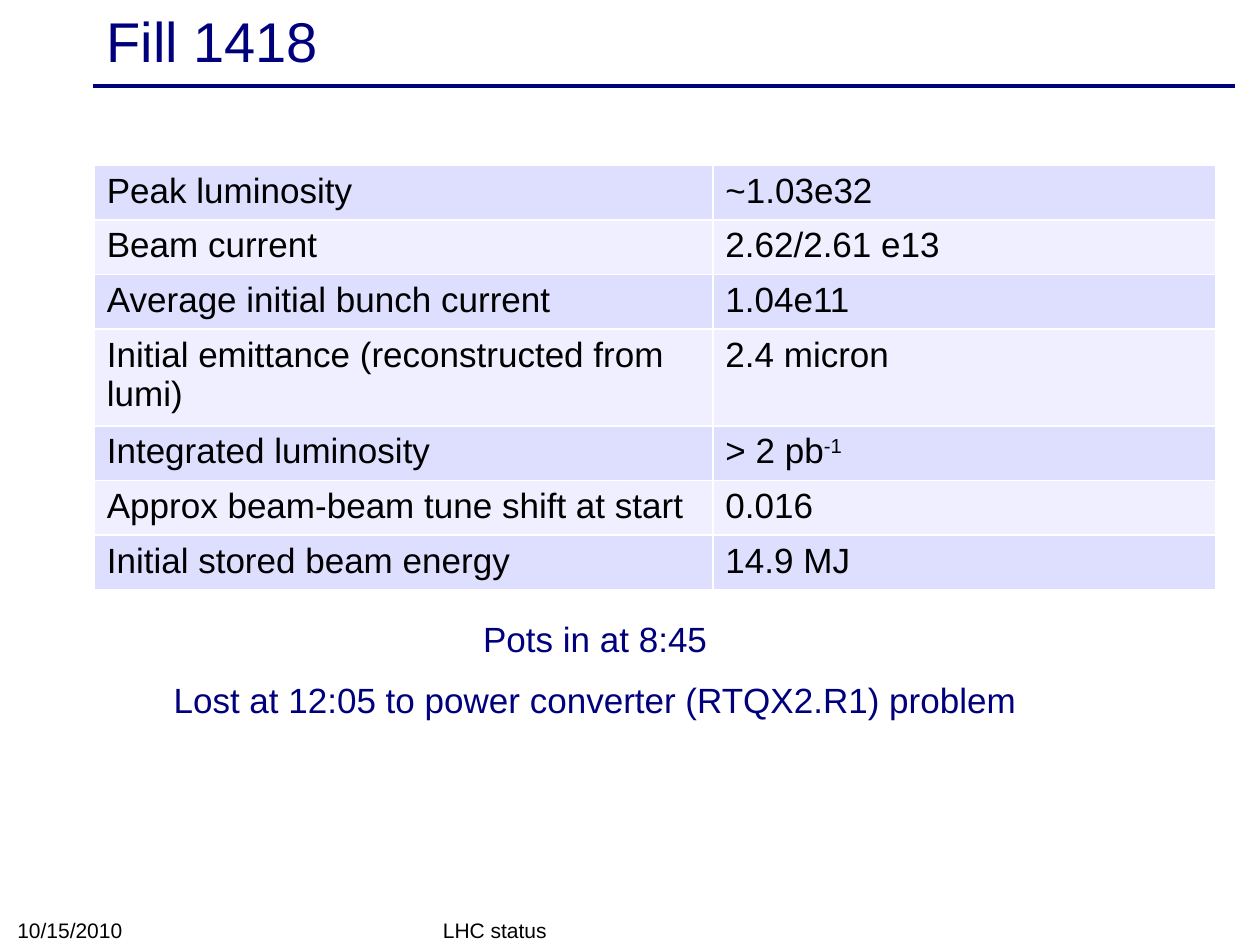
from dataclasses import dataclass

from lxml.etree import SubElement
from pptx import Presentation
from pptx.dml.color import RGBColor as Rgb
from pptx.enum.shapes import MSO_CONNECTOR as Link
from pptx.enum.text import MSO_ANCHOR as Anchor, PP_ALIGN as Align
from pptx.oxml.ns import qn
from pptx.util import Cm, Pt


@dataclass(frozen=True)
class Theme:
    face: str = "Arial"
    navy: str = "00007D"
    black: str = "000000"
    white: str = "FFFFFF"
    bands: tuple = ("DEDEFF", "EFEFFF")
    title: int = 32
    body: int = 20
    foot: int = 12


THEME = Theme()

# Each value is its text and an optional superscript.
ROWS = [
    ("Peak luminosity", "~1.03e32", ""),
    ("Beam current", "2.62/2.61 e13", ""),
    ("Average initial bunch current", "1.04e11", ""),
    ("Initial emittance (reconstructed from lumi)", "2.4 micron", ""),
    ("Integrated luminosity", "> 2 pb", "-1"),
    ("Approx beam-beam tune shift at start", "0.016", ""),
    ("Initial stored beam energy", "14.9 MJ", ""),
]
NOTES = ["Pots in at 8:45", "Lost at 12:05 to power converter (RTQX2.R1) problem"]


def style(par, size, color, align=Align.LEFT):
    par.alignment = align
    font = par.font
    font.name, font.size = THEME.face, Pt(size)
    font.color.rgb = Rgb.from_string(color)


def add_text(slide, box, lines, size, color, anchor, align=Align.LEFT):
    frame = slide.shapes.add_textbox(*map(Cm, box)).text_frame
    frame.word_wrap = True
    frame.vertical_anchor = anchor
    frame.text = "\n".join(lines)
    for i, par in enumerate(frame.paragraphs):
        style(par, size, color, align)
        if i:
            par.space_before = Pt(size * 0.55)


def add_rule(slide, left, right, top):
    rule = slide.shapes.add_connector(Link.STRAIGHT, Cm(left), Cm(top), Cm(right), Cm(top))
    rule.line.color.rgb = Rgb.from_string(THEME.navy)
    rule.line.width = Pt(2)
    SubElement(rule._element.spPr, qn("a:effectLst"))


def add_edges(cell):
    """Draw thin white borders; they must precede the cell's fill."""
    props = cell._tc.get_or_add_tcPr()
    for side in ("lnL", "lnR", "lnT", "lnB"):
        edge = SubElement(props, qn(f"a:{side}"), w=str(Pt(1)))
        fill = SubElement(edge, qn("a:solidFill"))
        SubElement(fill, qn("a:srgbClr"), val=THEME.white)


def fill_cell(cell, text, power, band):
    add_edges(cell)
    cell.fill.solid()
    cell.fill.fore_color.rgb = Rgb.from_string(band)
    par = cell.text_frame.paragraphs[0]
    par.add_run().text = text
    if power:
        run = par.add_run()
        run.text = power
        run.font._element.set("baseline", "30000")
    style(par, THEME.body, THEME.black)


def add_grid(slide, left, top, widths, height):
    shape = slide.shapes.add_table(len(ROWS), len(widths), Cm(left), Cm(top),
                                   Cm(sum(widths)), Cm(height * len(ROWS)))
    grid = shape.table
    grid.first_row = grid.horz_banding = False
    for col, width in zip(grid.columns, widths):
        col.width = Cm(width)
    for i, (name, value, power) in enumerate(ROWS):
        grid.rows[i].height = Cm(height)
        band = THEME.bands[i % 2]
        fill_cell(grid.cell(i, 0), name, "", band)
        fill_cell(grid.cell(i, 1), value, power, band)


def main():
    deck = Presentation()
    deck.slide_width, deck.slide_height = Cm(25.4), Cm(19.05)
    slide = deck.slides.add_slide(deck.slide_layouts[6])
    add_rule(slide, 1.87, 24.9, 1.73)
    add_text(slide, (1.9, 0.08, 22.86, 1.45), ["Fill 1418"],
             THEME.title, THEME.navy, Anchor.MIDDLE)
    for left, width, text in ((8.68, 8.04, "LHC status"), (0.1, 5.92, "10/15/2010")):
        add_text(slide, (left, 18.4, width, 0.72), [text],
                 THEME.foot, THEME.black, Anchor.BOTTOM)
    add_grid(slide, 1.9, 3.33, (12.47, 10.14), 1.04)
    add_text(slide, (0.9, 12.32, 22.2, 3.68), NOTES,
             THEME.body, THEME.navy, Anchor.TOP, Align.CENTER)
    deck.save("out.pptx")


if __name__ == "__main__":
    main()
